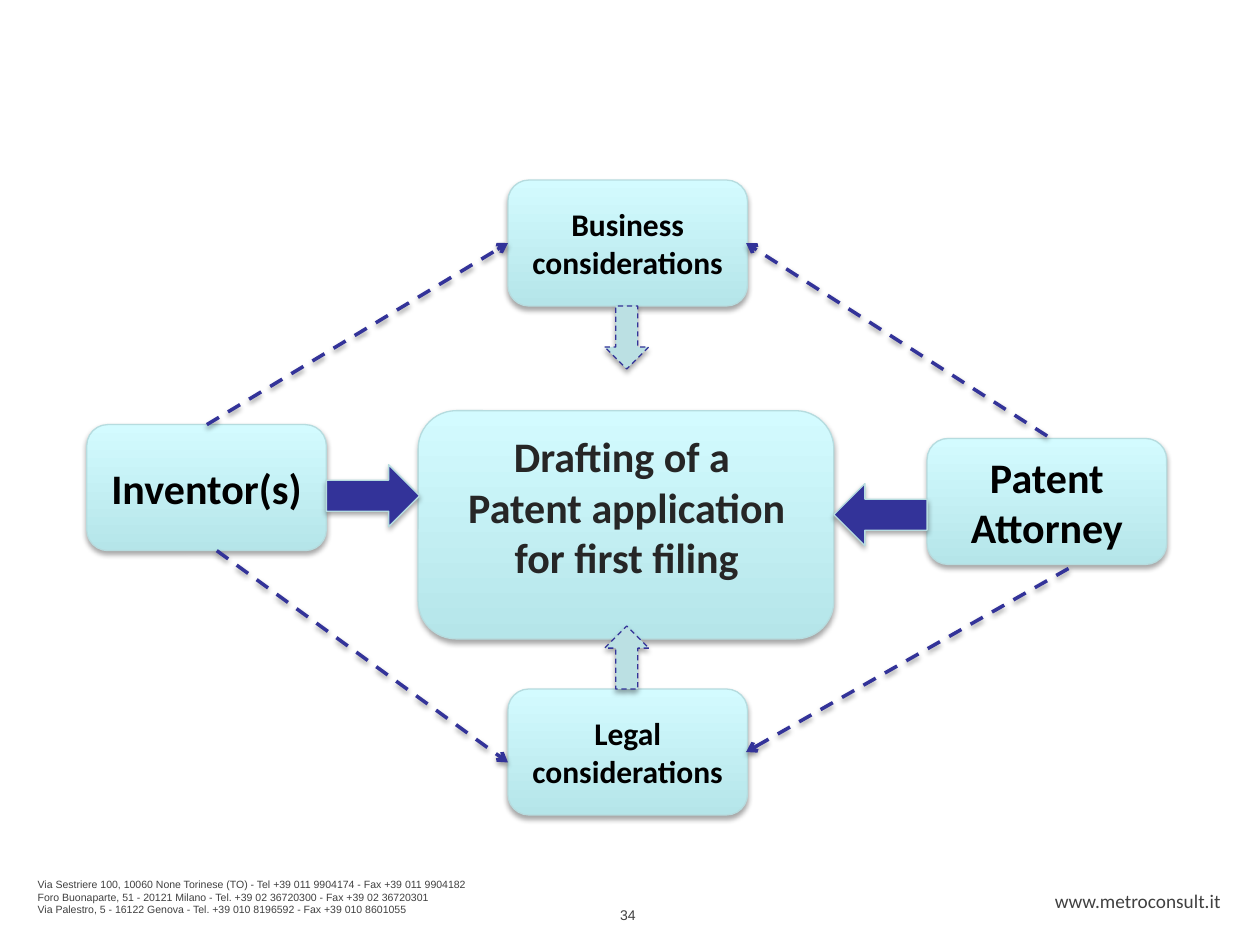
from dataclasses import dataclass

from lxml.etree import SubElement
from pptx import Presentation
from pptx.dml.color import RGBColor
from pptx.enum.dml import MSO_LINE_DASH_STYLE as DASH
from pptx.enum.shapes import MSO_CONNECTOR as LINK, MSO_SHAPE as SHAPE
from pptx.enum.text import MSO_ANCHOR as ANCHOR, MSO_AUTO_SIZE as FIT, PP_ALIGN as ALIGN
from pptx.oxml.ns import qn
from pptx.util import Cm, Pt


@dataclass(frozen=True)
class Theme:
    heading_font: str = "Calibri"
    small_font: str = "Arial"
    ink: str = "000000"
    title_ink: str = "262626"
    footer_ink: str = "404040"
    box_top: str = "D3FBFF"
    box_bottom: str = "B5E5E9"
    box_edge: str = "B6DCDF"
    navy: str = "333399"
    teal: str = "BBE0E3"
    large: int = 24
    medium: int = 18
    web: int = 11
    page: int = 8
    address: int = 6


def rgb(code):
    return RGBColor.from_string(code)


def cm(*lengths):
    return [Cm(length) for length in lengths]


class Diagram:
    def __init__(self, slide, theme):
        self.slide = slide
        self.theme = theme

    def add_lines(self, frame, lines, size, color, font=None, bold=False,
                  align=ALIGN.CENTER, soft_breaks=False):
        """Set one paragraph per line, or one paragraph with line breaks."""
        paragraph = frame.paragraphs[0]
        for index, line in enumerate(lines):
            if index and soft_breaks:
                paragraph.add_line_break()
            elif index:
                paragraph = frame.add_paragraph()
            paragraph.alignment = align
            run = paragraph.add_run()
            run.text = line
            run.font.name = font or self.theme.heading_font
            run.font.size = Pt(size)
            run.font.bold = bold
            run.font.color.rgb = rgb(color)

    def cast_shadow(self, shape, opacity, distance):
        """Add a soft downward shadow; call after fill and line are set."""
        effects = SubElement(shape._element.spPr, qn("a:effectLst"))
        shadow = SubElement(effects, qn("a:outerShdw"), blurRad=str(Pt(3.1)),
                            dist=str(Pt(distance)), dir="5400000", rotWithShape="0")
        black = SubElement(shadow, qn("a:srgbClr"), val="000000")
        SubElement(black, qn("a:alpha"), val=str(opacity * 1000))

    def outline(self, line, color, width, dashed):
        line.color.rgb = rgb(color)
        line.width = Pt(width)
        if dashed:
            line.dash_style = DASH.DASH

    def box(self, left, top, width, height, lines=(), size=None):
        box = self.slide.shapes.add_shape(
            SHAPE.ROUNDED_RECTANGLE, *cm(left, top, width, height))
        box.fill.gradient()
        box.fill.gradient_angle = 90
        stops = box.fill.gradient_stops
        for stop, color in zip(stops, (self.theme.box_bottom, self.theme.box_top)):
            stop.color.rgb = rgb(color)
        self.outline(box.line, self.theme.box_edge, 0.75, dashed=False)
        self.cast_shadow(box, 35, 1.8)
        box.text_frame.vertical_anchor = ANCHOR.MIDDLE
        self.add_lines(box.text_frame, lines, size, self.theme.ink, bold=True)

    def block_arrow(self, kind, left, top, width, height, fill, edge,
                    dashed=False, turn=0):
        arrow = self.slide.shapes.add_shape(kind, *cm(left, top, width, height))
        arrow.rotation = turn
        arrow.fill.solid()
        arrow.fill.fore_color.rgb = rgb(fill)
        self.outline(arrow.line, edge, 0.75, dashed)
        self.cast_shadow(arrow, 35, 1.8)

    def dashed_link(self, start, end):
        link = self.slide.shapes.add_connector(LINK.STRAIGHT, *cm(*start, *end))
        self.outline(link.line, self.theme.navy, 2, dashed=True)
        line_xml = link._element.spPr.find(qn("a:ln"))
        SubElement(line_xml, qn("a:tailEnd"), type="arrow")
        self.cast_shadow(link, 38, 1.6)

    def title(self, left, top, width, height, lines):
        title = self.slide.shapes.title
        title.left, title.top, title.width, title.height = cm(left, top, width, height)
        frame = title.text_frame
        frame.auto_size = FIT.NONE
        frame.vertical_anchor = ANCHOR.TOP
        self.add_lines(frame, lines, self.theme.large, self.theme.title_ink,
                       bold=True, soft_breaks=True)
        # Bring the title in front of the box drawn behind it.
        self.slide.shapes._spTree.append(title._element)

    def label(self, left, top, width, height, lines, size, font, align, inset=True):
        frame = self.slide.shapes.add_textbox(*cm(left, top, width, height)).text_frame
        frame.word_wrap = inset
        if not inset:
            frame.margin_left = frame.margin_right = 0
            frame.margin_top = frame.margin_bottom = 0
        self.add_lines(frame, lines, size, self.theme.footer_ink, font, align=align)


def main():
    deck = Presentation()
    deck.slide_width, deck.slide_height = cm(25.4, 19.05)
    theme = Theme()
    diagram = Diagram(deck.slides.add_slide(deck.slide_layouts[5]), theme)

    diagram.label(0.51, 17.58, 12.7, 1.02, [
        "Via Sestriere 100, 10060 None Torinese (TO) - Tel +39 011 9904174 - Fax +39 011 9904182",
        "Foro Buonaparte, 51 - 20121 Milano - Tel. +39 02 36720300 - Fax +39 02 36720301",
        "Via Palestro, 5 - 16122 Genova - Tel. +39 010 8196592 - Fax +39 010 8601055",
    ], theme.address, theme.small_font, ALIGN.LEFT)
    diagram.label(21.21, 17.93, 3.4, 0.48, ["www.metroconsult.it"],
                  theme.web, theme.heading_font, ALIGN.RIGHT, inset=False)
    diagram.label(9.65, 18.16, 6.02, 0.58, ["34"],
                  theme.page, theme.small_font, ALIGN.CENTER)

    diagram.box(8.43, 8.28, 8.38, 4.6)
    diagram.title(8.71, 8.56, 7.85, 3.07,
                  ["Drafting of a ", "Patent application", "for first filing"])

    for left, top, lines, size in (
        (1.75, 8.56, ["Inventor(s)"], theme.large),
        (18.69, 8.84, ["Patent", "Attorney"], theme.large),
        (10.24, 3.63, ["Business considerations"], theme.medium),
        (10.24, 13.89, ["Legal", "considerations"], theme.medium),
    ):
        diagram.box(left, top, 4.83, 2.54, lines, size)

    for left, top, turn in ((6.58, 9.37, 0), (16.81, 9.75, 180)):
        diagram.block_arrow(SHAPE.RIGHT_ARROW, left, top, 1.88, 1.25,
                            theme.navy, theme.box_edge, turn=turn)
    for top, turn in ((6.17, 0), (12.62, 180)):
        diagram.block_arrow(SHAPE.DOWN_ARROW, 12.19, top, 0.89, 1.27,
                            theme.teal, theme.navy, dashed=True, turn=turn)

    for start, end in (
        ((4.17, 8.56), (10.24, 4.9)),
        ((21.11, 8.79), (15.04, 4.9)),
        ((4.37, 11.1), (10.24, 15.37)),
        ((21.54, 11.46), (15.04, 15.16)),
    ):
        diagram.dashed_link(start, end)

    deck.save("out.pptx")


if __name__ == "__main__":
    main()
